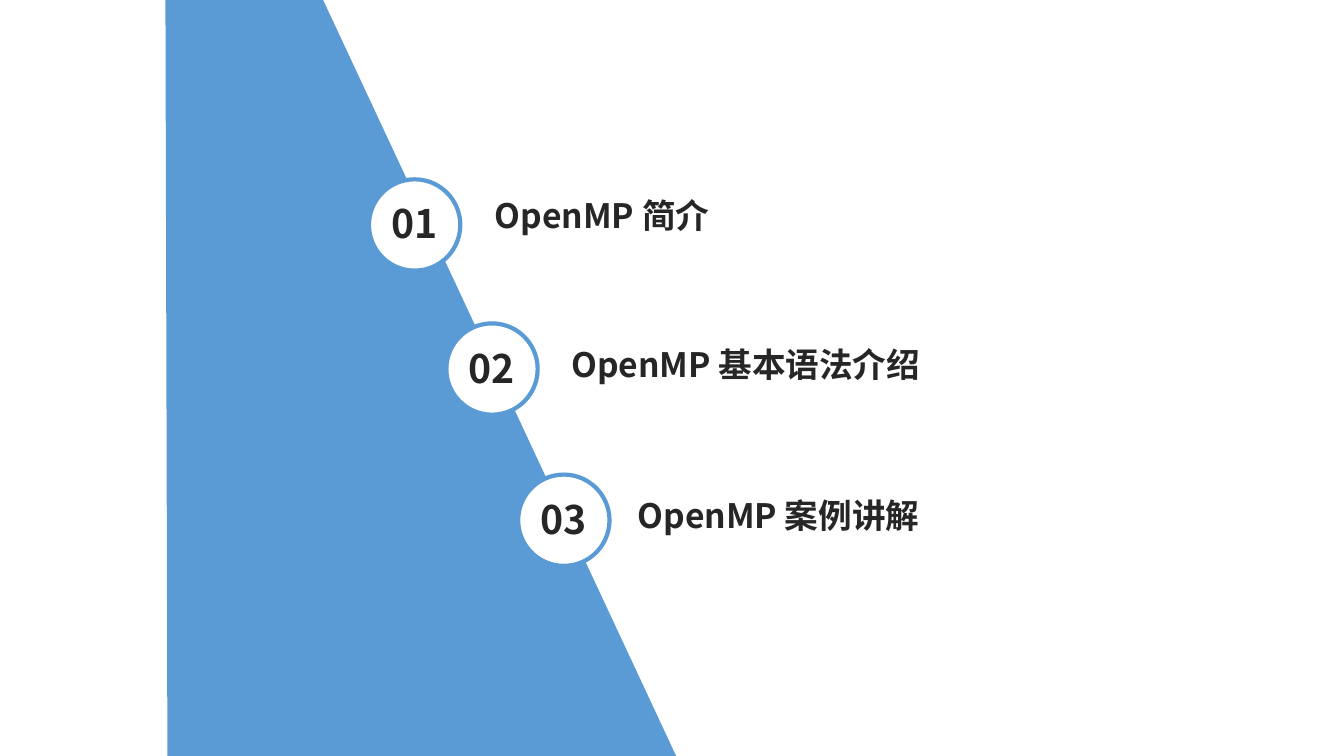
"""Build an agenda slide with numbered badges along a slanted blue panel."""
from lxml import etree
from pptx import Presentation
from pptx import util as u
from pptx.dml.color import RGBColor
from pptx.enum import shapes, text
from pptx.oxml.ns import qn

COLORS = {"blue": "5B9BD5", "white": "FFFFFF", "ink": "262626"}
FONT = "Noto Sans CJK SC"
BADGE_SIZE = 2.3
PANEL = [(17.04, 19.05), (8.13, -0.03), (4.17, -0.03), (4.22, 19.15)]
AGENDA = [
    ("OpenMP 简介", (9.3, 4.52), (12.22, 4.78), 15.52),
    ("OpenMP 基本语法介绍", (11.25, 8.15), (14.15, 8.53), 13.89),
    ("OpenMP 案例讲解", (13.06, 11.96), (15.82, 12.34), 13.89),
]


class AgendaSlide:
    """Holds the slide and its style, with a method for each element."""

    def __init__(self, prs):
        """Add a blank slide to the presentation."""
        self.slide = prs.slides.add_slide(prs.slide_layouts[6])

    def color(self, name):
        """Return a named colour."""
        return RGBColor.from_string(COLORS[name])

    def fill(self, sp, name):
        """Give a shape a solid fill and no shadow."""
        sp.shadow.inherit = False
        sp.fill.solid()
        sp.fill.fore_color.rgb = self.color(name)

    def panel(self, points):
        """Draw the slanted panel through the points."""
        corners = [(u.Cm(x), u.Cm(y)) for x, y in points]
        builder = self.slide.shapes.build_freeform(*corners[0])
        builder.add_line_segments(corners[1:], close=True)
        sp = builder.convert_to_shape()
        self.fill(sp, "blue")
        sp.line.fill.background()

    def label(self, parent, box, words, size, align=text.PP_ALIGN.LEFT):
        """Add a line of bold text to a shape collection."""
        sp = parent.add_textbox(*map(u.Cm, box))
        tf = sp.text_frame
        tf.word_wrap = True
        tf.auto_size = text.MSO_AUTO_SIZE.SHAPE_TO_FIT_TEXT
        p = tf.paragraphs[0]
        p.text = words
        p.alignment = align
        r = p.runs[0]
        r.font.size = u.Pt(size)
        r.font.bold = True
        r.font.name = FONT
        r.font.color.rgb = self.color("ink")
        etree.SubElement(r.font._element, qn("a:ea"), typeface=FONT)

    def badge(self, left, top, number):
        """Draw a numbered circle as one group."""
        group = self.slide.shapes.add_group_shape().shapes
        box = map(u.Cm, (left, top, BADGE_SIZE, BADGE_SIZE))
        sp = group.add_shape(shapes.MSO_SHAPE.OVAL, *box)
        self.fill(sp, "white")
        sp.line.color.rgb = self.color("blue")
        sp.line.width = u.Pt(3)
        self.label(group, (left + 0.21, top + 0.39, 1.88, 1.52),
                   f"{number:02}", 28, text.PP_ALIGN.CENTER)


def main():
    """Build and save the slide."""
    prs = Presentation()
    prs.slide_width, prs.slide_height = u.Cm(33.87), u.Cm(19.05)
    s = AgendaSlide(prs)
    s.panel(PANEL)
    for number, (words, badge, label, width) in enumerate(AGENDA, 1):
        s.badge(*badge, number)
        s.label(s.slide.shapes, (*label, width, 1.27), words, 24)
    prs.save("out.pptx")


if __name__ == "__main__":
    main()
